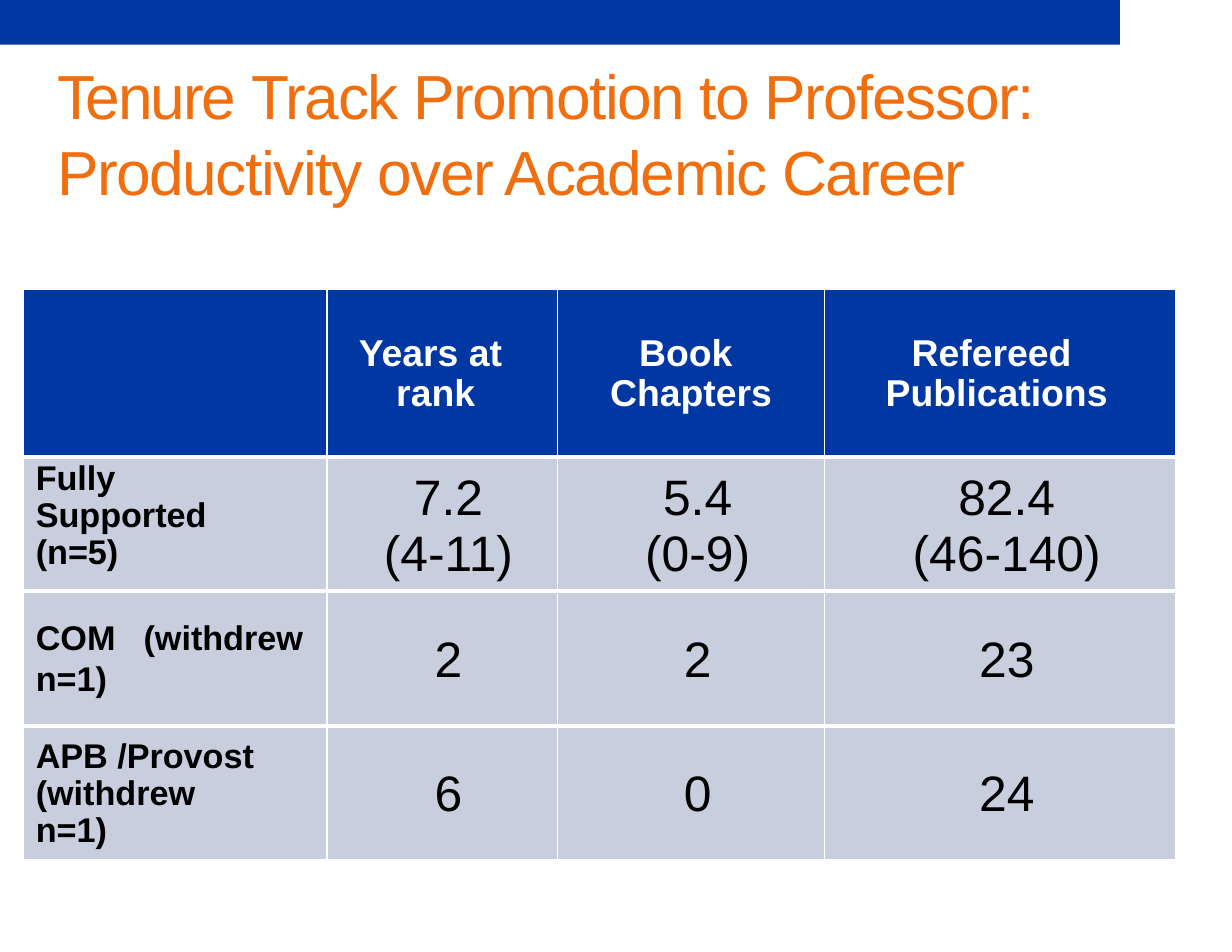
from pptx import Presentation
from pptx.dml.color import RGBColor
from pptx.enum.shapes import MSO_SHAPE
from pptx.enum.text import MSO_ANCHOR as Anchor, PP_ALIGN as Align
from pptx.oxml.ns import qn
from pptx.util import Inches, Pt
from lxml.etree import SubElement

BLUE, ORANGE, GREY, WHITE, BLACK = "0037A2", "F06E0D", "C9CEDF", "FFFFFF", "000000"
TITLE = [("Tenure ", -1.4),
         ("Track Promotion to Professor: Productivity over Academic Career", -0.9)]
HEADERS = ["", "Years at \vrank", "Book \vChapters", "Refereed \vPublications"]
HEADER_RIGHT = [0, 0.23, 0.12, 0.18]
ROWS = [
    [["Fully\vSupported\v(n=5)"], ["7.2", "(4-11)"], ["5.4", "(0-9)"], ["82.4", "(46-140)"]],
    [[[("COM", 0), (" ", 12), ("(withdrew", 0)], "n=1)"], ["2"], ["2"], ["23"]],
    [["APB /Provost\v(withdrew\vn=1)"], ["6"], ["0"], ["24"]],
]
COLUMN_WIDTHS = [2.71, 2.06, 2.38, 3.14]
ROW_HEIGHTS = [1.5, 1.2, 1.2, 1.2]
HEADER_FORMAT = {"size": Pt(24), "bold": True, "color": WHITE}
LABEL_FORMAT = {"size": Pt(22), "bold": True, "color": BLACK}
VALUE_FORMAT = {"size": Pt(32), "bold": False, "color": BLACK}


def rgb(value):
    """Turn a hex string into a colour."""
    return RGBColor.from_string(value)


def paint(fill, color):
    """Give a solid fill."""
    fill.solid()
    fill.fore_color.rgb = rgb(color)


def write(frame, paragraphs, style, align, spacing, before):
    """Write paragraphs, each a string or a list of (text, tracking)."""
    for index, content in enumerate(paragraphs):
        paragraph = frame.paragraphs[0] if index == 0 else frame.add_paragraph()
        paragraph.alignment = align
        paragraph.line_spacing = spacing
        paragraph.space_before = Pt(before)
        pieces = [(content, 0)] if isinstance(content, str) else content
        for text, tracking in pieces:
            for number, line in enumerate(text.split("\v")):
                if number:
                    paragraph.add_line_break()
                run = paragraph.add_run()
                run.text = line
                run.font.name = "Arial"
                run.font.color.rgb = rgb(style["color"])
                for name in ("size", "bold"):
                    setattr(run.font, name, style[name])
                run.font._element.set("spc", str(round(tracking * 100)))


def add_borders(cell, top, bottom):
    """Draw white lines on all four sides of a cell."""
    properties = cell._tc.get_or_add_tcPr()
    for side, width in {"lnL": 1, "lnR": 1, "lnT": top, "lnB": bottom}.items():
        line = SubElement(properties, qn(f"a:{side}"), w=str(Pt(width)))
        fill = SubElement(line, qn("a:solidFill"))
        SubElement(fill, qn("a:srgbClr"), val=WHITE)


def add_title(slide):
    """Place and write the title."""
    title = slide.shapes.title
    title.left, title.top, title.width, title.height = map(Inches, (0.5, 0.5, 9.41, 1.36))
    frame = title.text_frame
    margins = {"margin_left": 0.01, "margin_top": 0.01, "margin_right": 0, "margin_bottom": 0}
    for name, value in margins.items():
        setattr(frame, name, Inches(value))
    frame.word_wrap = True
    frame.vertical_anchor = Anchor.BOTTOM
    write(frame, [TITLE], {"size": Pt(40), "bold": False, "color": ORANGE}, Align.LEFT, 1.02, 0)


def add_promotion_table(slide):
    """Build the productivity table."""
    content = [[[text] if text else [] for text in HEADERS]] + ROWS
    table = slide.shapes.add_table(
        len(content), len(HEADERS), Inches(0.21), Inches(2.58),
        Inches(sum(COLUMN_WIDTHS)), Inches(sum(ROW_HEIGHTS))).table
    table.horz_banding = False
    for column, width in zip(table.columns, COLUMN_WIDTHS):
        column.width = Inches(width)
    for row, height in zip(table.rows, ROW_HEIGHTS):
        row.height = Inches(height)
    last = len(content) - 1
    for r, row in enumerate(content):
        for c, paragraphs in enumerate(row):
            cell = table.cell(r, c)
            header, label = r == 0, c == 0
            margins = {"margin_left": 0.11 if c < 2 else 0.12, "margin_top": 0.03,
                       "margin_right": HEADER_RIGHT[c] if header else 0, "margin_bottom": 0}
            for name, value in margins.items():
                setattr(cell, name, Inches(value))
            cell.vertical_anchor = Anchor.TOP if label and r == 1 else Anchor.MIDDLE
            add_borders(cell, 1 if header else 3, 1 if r == last else 3)
            paint(cell.fill, BLUE if header else GREY)
            style = HEADER_FORMAT if header else LABEL_FORMAT if label else VALUE_FORMAT
            write(cell.text_frame, paragraphs, style, Align.LEFT if label else Align.CENTER,
                  0.96 if header else 0.97 if label else 1.0, 2.4 if header or label else 0.1)


def main():
    """Build and save the slide."""
    presentation = Presentation()
    presentation.slide_width, presentation.slide_height = Inches(11), Inches(8.5)
    slide = presentation.slides.add_slide(presentation.slide_layouts[5])
    bar = slide.shapes.add_shape(MSO_SHAPE.RECTANGLE, 0, 0, Inches(10), Inches(0.4))
    bar.shadow.inherit = False
    paint(bar.fill, BLUE)
    bar.line.fill.background()
    add_title(slide)
    add_promotion_table(slide)
    presentation.save("out.pptx")


if __name__ == "__main__":
    main()
